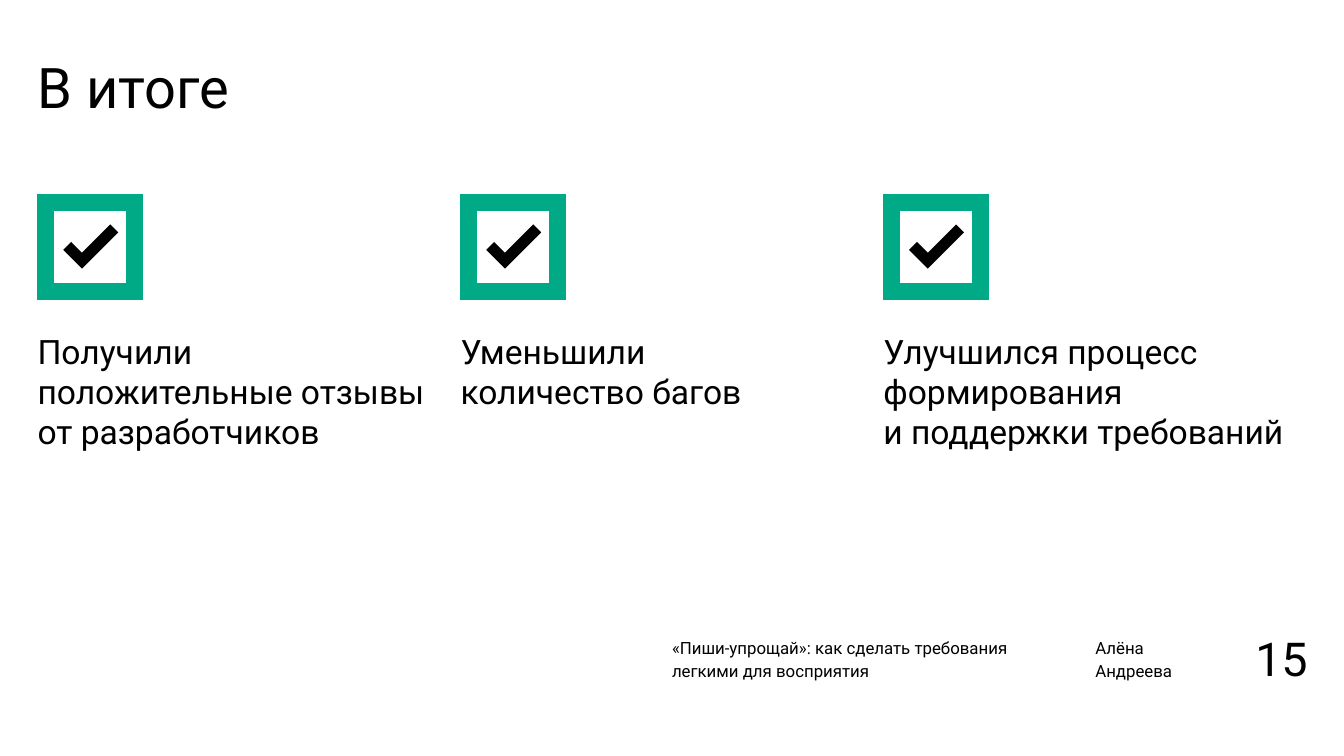
from lxml import etree
from pptx import Presentation
from pptx.dml.color import RGBColor
from pptx.enum.shapes import MSO_SHAPE
from pptx.enum.text import MSO_ANCHOR, PP_ALIGN
from pptx.oxml.ns import qn
from pptx.util import Inches, Pt

RECTANGLE = MSO_SHAPE.RECTANGLE
TOP = MSO_ANCHOR.TOP
LEFT, RIGHT = PP_ALIGN.LEFT, PP_ALIGN.RIGHT

# Content
TITLE = "В итоге"
RESULTS = [  # text, text width
    ("Получили положительные отзывы от\u00a0разработчиков", 2.9),
    ("Уменьшили количество багов", 2.36),
    ("Улучшился процесс формирования и\u00a0поддержки требований", 3.11),
]
TALK = "«Пиши-упрощай»: как сделать требования\nлегкими для восприятия"
SPEAKER = "Алёна Андреева"
PAGE = "15"

# Layout and style: a 16:9 slide with three equal columns
WIDTH = 10
HEIGHT = WIDTH * 9 / 16
MARGIN = 0.28
COLUMN = (WIDTH - 2 * MARGIN) / len(RESULTS)
BOX_TOP, BOX_SIZE, BOX_INSET = 1.51, 0.66, 0.06
TICK = [(0.16, 0.32), (0.27, 0.43), (0.51, 0.19)]  # offsets inside the box
TEXT_TOP, TEXT_HEIGHT = 2.46, 0.79
FOOTER_TOP, FOOTER_HEIGHT = 4.72, 0.32
FONT, BLACK, GREEN = "Roboto", "000000", "00AA87"


def color(value):
    return RGBColor.from_string(value)


def write(text, left, top, width, height, size=18, align=LEFT, spacing=1.0, holder=None):
    """Put text in a placeholder, or in a new text box."""
    area = [Inches(v) for v in (left, top, width, height)]
    holder = holder or slide.shapes.add_textbox(*area)
    holder.left, holder.top, holder.width, holder.height = area
    frame = holder.text_frame
    frame.margin_left = frame.margin_right = frame.margin_top = frame.margin_bottom = 0
    frame.word_wrap = True
    frame.vertical_anchor = TOP
    frame.text = text
    for paragraph in frame.paragraphs:
        paragraph.alignment = align
        paragraph.line_spacing = spacing
        paragraph.font.name = FONT
        paragraph.font.size = Pt(size)
        paragraph.font.color.rgb = color(BLACK)


def outline(shape, line_color, width):
    """Leave a shape unfilled, with a sharp-cornered line."""
    shape.shadow.inherit = False
    shape.fill.background()
    shape.line.color.rgb = color(line_color)
    shape.line.width = Pt(width)
    line = shape.element.spPr.find(qn("a:ln"))
    etree.SubElement(line, qn("a:miter")).set("lim", "800000")


def checkbox(left, top):
    box = slide.shapes.add_shape(
        RECTANGLE, Inches(left), Inches(top), Inches(BOX_SIZE), Inches(BOX_SIZE))
    outline(box, GREEN, 9)
    start, *rest = [(Inches(left + x), Inches(top + y)) for x, y in TICK]
    builder = slide.shapes.build_freeform(*start)
    builder.add_line_segments(rest, close=False)
    outline(builder.convert_to_shape(), BLACK, 6)


prs = Presentation()
prs.slide_width, prs.slide_height = Inches(WIDTH), Inches(HEIGHT)
slide = prs.slides.add_slide(prs.slide_layouts[5])

# Title
write(TITLE, MARGIN, 0.39, 9.45, 0.66, size=30, holder=slide.shapes.title)

# Results, one per column
for column, (result, text_width) in enumerate(RESULTS):
    left = MARGIN + column * COLUMN
    checkbox(left + BOX_INSET, BOX_TOP)
    write(result, left, TEXT_TOP, text_width, TEXT_HEIGHT)

# Footer
write(TALK, WIDTH / 2, FOOTER_TOP, 2.61, FOOTER_HEIGHT, size=9, spacing=1.15)
write(SPEAKER, 8.15, FOOTER_TOP, 0.76, FOOTER_HEIGHT, size=9, spacing=1.15)
write(PAGE, 9.27, 4.69, 0.46, 0.46, size=25, align=RIGHT)

prs.save("out.pptx")
